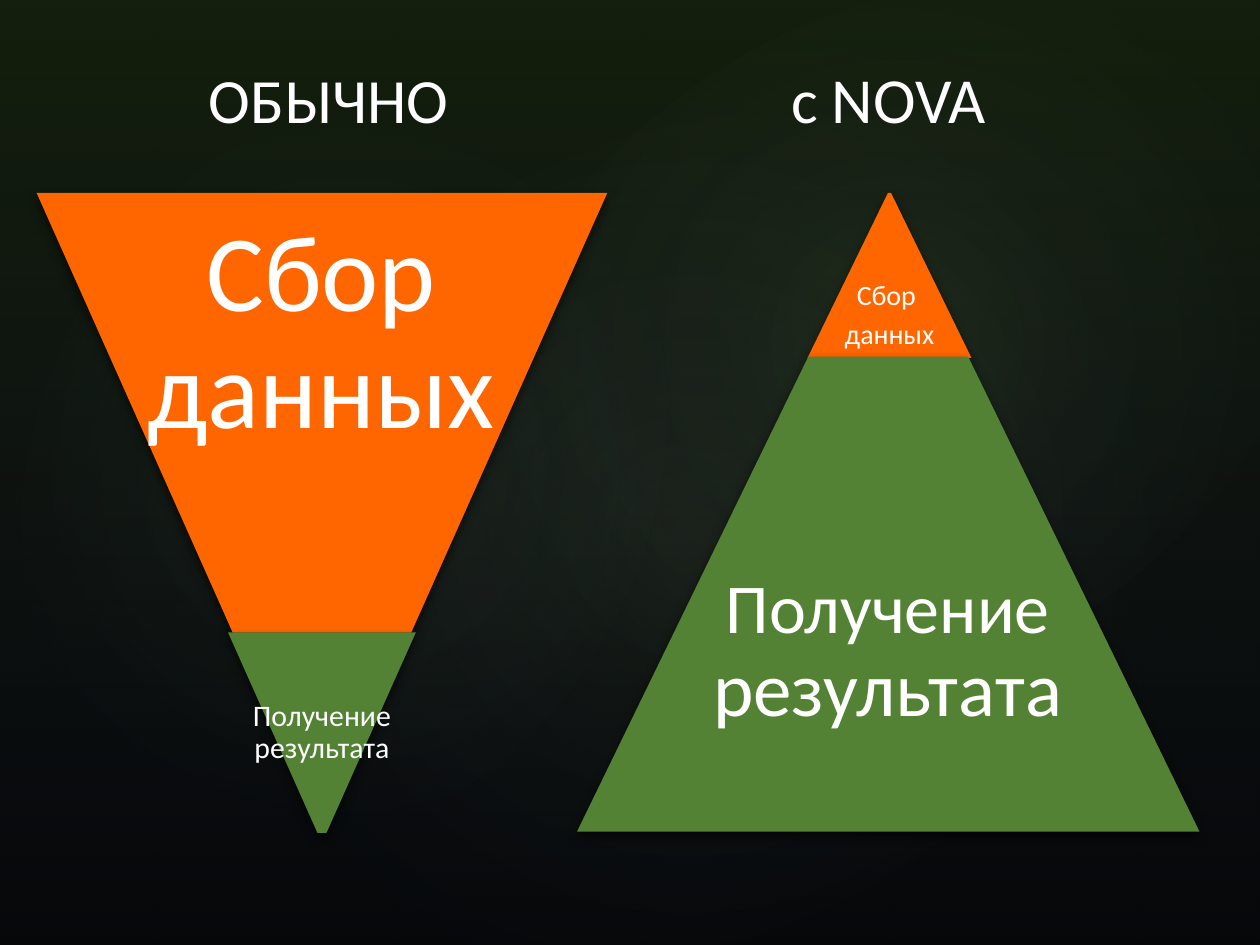
from pptx import Presentation, util as u
from pptx.dml.color import RGBColor
from pptx.enum import shapes, text
from pptx.oxml import parse_xml
from pptx.oxml.ns import nsdecls, qn

COLORS = {
    "black": "000000",
    "white": "FFFFFF",
    "collect": "FF6600",
    "result": "548235",
    "forest": "385723",
    "slate": "44546A",
    "leaf": "A9D18E",
}
BODY_FONT = "Calibri"
LINE_SPACING = 0.9
SHAPES = shapes.MSO_SHAPE
GLOWS = [
    ((1.5, 1.14, 7.92, 6.24), 328.7, 7),
    ((-0.3, 1.28, 6.06, 4.9), 294.3, 8),
    ((3.58, 0.13, 7.09, 5.2), 328.7, 8),
]
LINEAR = '<a:lin ang="5400000" scaled="0"/>'
RADIAL = '<a:path path="circle"><a:fillToRect l="50000" t="50000" r="50000" b="50000"/></a:path>'


def rgb(name):
    return RGBColor.from_string(COLORS[name])


def place(area):
    return [u.Inches(length) for length in area]


def add_plain_shape(page, kind, area, rotation=0):
    shape = page.shapes.add_shape(kind, *place(area))
    shape.rotation = rotation
    shape.line.fill.background()
    shape.shadow.inherit = False
    return shape


def add_gradient(page, kind, area, stops, direction, rotation=0):
    shape = add_plain_shape(page, kind, area, rotation)
    shape.fill.background()
    stop_xml = "".join(
        f'<a:gs pos="{position * 1000}"><a:srgbClr val="{COLORS[color]}">'
        f'<a:alpha val="{opacity * 1000}"/></a:srgbClr></a:gs>'
        for position, color, opacity in stops
    )
    gradient = parse_xml(
        f'<a:gradFill {nsdecls("a")} rotWithShape="1">'
        f"<a:gsLst>{stop_xml}</a:gsLst>{direction}</a:gradFill>"
    )
    properties = shape.element.spPr
    properties.replace(properties.find(qn("a:noFill")), gradient)


def add_backdrop(page, deck):
    page.background.fill.solid()
    page.background.fill.fore_color.rgb = rgb("black")
    whole = (0, 0, deck.slide_width.inches, deck.slide_height.inches)
    add_gradient(page, SHAPES.RECTANGLE, whole,
                 [(0, "forest", 36), (100, "slate", 10)], LINEAR)
    for area, rotation, opacity in GLOWS:
        add_gradient(page, SHAPES.OVAL, area,
                     [(0, "leaf", opacity), (58, "slate", 0)], RADIAL, rotation)


def add_tier(page, area, slope, color, rotation=0):
    shape = add_plain_shape(page, SHAPES.TRAPEZOID, area, rotation)
    shape.adjustments[0] = slope
    shape.fill.solid()
    shape.fill.fore_color.rgb = rgb(color)
    effects = shape.element.spPr.find(qn("a:effectLst"))
    effects.append(parse_xml(
        f'<a:outerShdw {nsdecls("a")} blurRad="{u.Pt(6)}" dist="{u.Pt(3)}" '
        f'dir="5400000" rotWithShape="0"><a:srgbClr val="{COLORS["black"]}">'
        '<a:alpha val="60000"/></a:srgbClr></a:outerShdw>'
    ))


def add_text(page, area, paragraphs, frame_format, para_format):
    box = page.shapes.add_textbox(*place(area))
    frame = box.text_frame
    for name, value in frame_format.items():
        setattr(frame, name, value)
    for index, spans in enumerate(paragraphs):
        para = frame.add_paragraph() if index else frame.paragraphs[0]
        for name, value in para_format.items():
            setattr(para, name, value)
        for wording, size, *font in spans:
            span = para.add_run()
            span.text = wording
            span.font.size = u.Pt(size)
            span.font.name = font[0] if font else BODY_FONT
            span.font.color.rgb = rgb("white")


def add_heading(page, area, spans):
    frame_format = {"word_wrap": True, "vertical_anchor": text.MSO_ANCHOR.BOTTOM}
    add_text(page, area, [spans], frame_format, {})


def add_label(page, area, paragraphs, gap=0):
    margins = ("margin_left", "margin_top", "margin_right", "margin_bottom")
    frame_format = dict.fromkeys(margins, 0)
    frame_format.update(word_wrap=True, vertical_anchor=text.MSO_ANCHOR.TOP)
    para_format = {
        "alignment": text.PP_ALIGN.CENTER,
        "line_spacing": LINE_SPACING,
        "space_after": u.Pt(gap),
    }
    add_text(page, area, paragraphs, frame_format, para_format)


def main():
    deck = Presentation()
    deck.slide_width, deck.slide_height = u.Inches(10), u.Inches(7.5)
    page = deck.slides.add_slide(deck.slide_layouts[6])
    add_backdrop(page, deck)

    add_heading(page, (6.18, 0.42, 2.11, 0.71), [("c ", 36), ("NOVA", 36.7)])
    add_heading(page, (1.56, 0.42, 2.53, 0.71), [("ОБЫЧНО", 36)])

    add_tier(page, (6.41, 1.53, 1.3, 1.31), 0.491, "collect")
    add_label(page, (6.41, 2.23, 1.3, 0.61),
              [[("Сбор ", 16)], [("данных", 16)]], gap=5.3)
    add_tier(page, (4.58, 2.83, 4.94, 3.77), 0.487, "result")
    add_label(page, (5.44, 4.5, 3.21, 1.4),
              [[("Получение", 40), (" ", 44, "Cambria"), ("результата", 44)]])

    add_tier(page, (0.29, 1.53, 4.53, 3.49), 0.446, "collect", 180)
    add_label(page, (1.08, 1.73, 2.94, 1.9), [[("Сбор данных", 62)]])
    add_tier(page, (1.81, 5.02, 1.49, 1.59), 0.476, "result", 180)
    add_label(page, (1.81, 5.56, 1.49, 0.52), [[("Получение результата", 17)]])

    deck.save("out.pptx")


if __name__ == "__main__":
    main()
